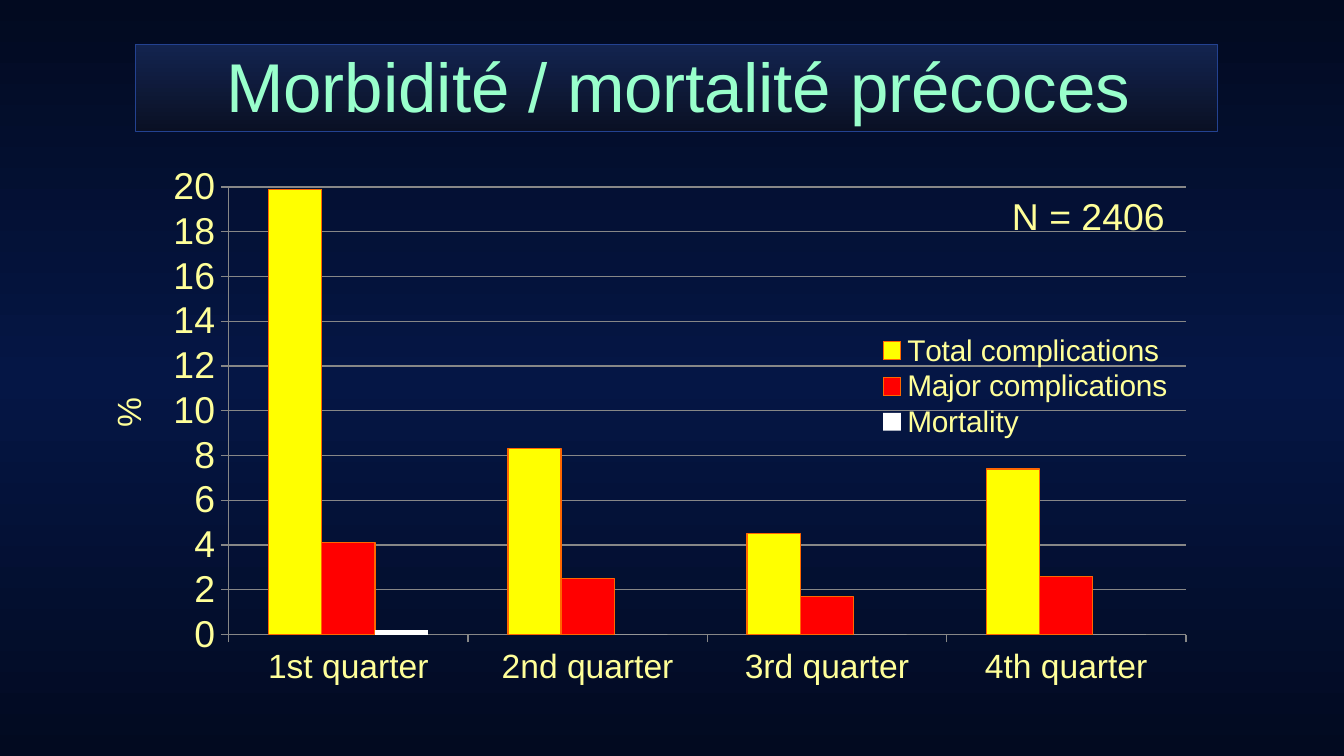
from copy import deepcopy

from pptx import Presentation
from pptx.chart.data import CategoryChartData
from pptx.dml.color import RGBColor
from pptx.enum.chart import XL_CHART_TYPE as Kind, XL_LEGEND_POSITION as Side
from pptx.enum.chart import XL_TICK_MARK as Tick
from pptx.enum.shapes import MSO_SHAPE as Shape
from pptx.enum.text import MSO_ANCHOR as Anchor, PP_ALIGN as Align
from pptx.oxml import parse_xml
from pptx.oxml.ns import nsdecls
from pptx.util import Inches, Pt

CREAM = "FFFF99"
GREY = "878787"


def paint(color, code):
    color.rgb = RGBColor.from_string(code)


def style(font, size, code):
    for name, value in {"name": "Arial", "size": Pt(size), "bold": False}.items():
        setattr(font, name, value)
    paint(font.color, code)


prs = Presentation()
prs.slide_width = Inches(10)
prs.slide_height = Inches(10 * 9 / 16)
slide = prs.slides.add_slide(prs.slide_layouts[6])
shapes = slide.shapes

# Title band
band = shapes.add_shape(Shape.RECTANGLE, Inches(1.01), Inches(0.33),
                        Inches(8.05), Inches(0.65))
band.shadow.inherit = False
paint_line = band.line
paint(paint_line.color, "234291")
paint_line.width = Pt(0.75)

# Gradients: the background is lighter in the middle, the band fades down
back = slide.background.fill
back.gradient()
stops = slide.element.xpath(".//p:bgPr//a:gsLst")[0]
stops.append(deepcopy(stops[0]))
band.fill.gradient()
fades = [
    (back, [(0, "020A20"), (0.5, "051645"), (1, "020A20")]),
    (band.fill, [(0, "13244F"), (1, "0A1024")]),
]
for fill, tones in fades:
    fill.gradient_angle = 270
    for stop, (pos, code) in zip(fill.gradient_stops, tones):
        stop.position = pos
        paint(stop.color, code)

# Chart
data = CategoryChartData()
data.categories = ["1st quarter", "2nd quarter", "3rd quarter", "4th quarter"]
rows = [
    ("Total complications", (19.9, 8.3, 4.5, 7.4), "FFFF00", "FF6600"),
    ("Major complications", (4.1, 2.5, 1.7, 2.6), "FF0000", "FF6600"),
    ("Mortality", (0.2, 0, 0, 0), "FFFFFF", None),
]
for name, vals, _, _ in rows:
    data.add_series(name, vals)
chart = shapes.add_chart(Kind.COLUMN_CLUSTERED, Inches(0.66), Inches(1.22),
                         Inches(8.54), Inches(3.9), data).chart
chart.has_title = False
style(chart.font, 10, "000000")
plot = chart.plots[0]
for name, value in {"gap_width": 150, "overlap": 0, "vary_by_categories": False}.items():
    setattr(plot, name, value)
for bars, (_, _, code, edge) in zip(plot.series, rows):
    bars.format.fill.solid()
    paint(bars.format.fill.fore_color, code)
    if edge:
        paint(bars.format.line.color, edge)
        bars.format.line.width = Pt(0.75)
    else:
        bars.format.line.fill.background()

cat, val = chart.category_axis, chart.value_axis
for axis, size in ((cat, 18), (val, 20)):
    style(axis.tick_labels.font, size, CREAM)
    axis.major_tick_mark = Tick.OUTSIDE
    axis.minor_tick_mark = Tick.NONE
    paint(axis.format.line.color, GREY)
for name, value in {"minimum_scale": 0, "maximum_scale": 20, "major_unit": 2,
                    "has_major_gridlines": True}.items():
    setattr(val, name, value)
paint(val.major_gridlines.format.line.color, GREY)
head = val.axis_title.text_frame
head.text = "%"
style(head.paragraphs[0].runs[0].font, 18, CREAM)

chart.has_legend = True
legend = chart.legend
legend.position = Side.RIGHT
legend.include_in_layout = False
style(legend.font, 16, CREAM)

# Fixed places, as shares of the chart: parent, element before, layout values
root = chart.element
edges = [("xMode", "edge"), ("yMode", "edge")]
inner = [("layoutTarget", "inner")]
places = [
    ("c:plotArea", None, inner + edges, (0.122, 0.044, 0.834, 0.854)),
    ("c:valAx/c:title", "c:tx", edges, (0.01, 0.435)),
    ("c:legend", "c:legendPos", edges, (0.686, 0.319, 0.26, 0.21)),
]
for tag, prior, marks, box in places:
    body = "".join(f'<c:{key} val="{value}"/>'
                   for key, value in [*marks, *zip("xywh", box)])
    layout = parse_xml(f'<c:layout {nsdecls("c")}><c:manualLayout>{body}'
                       "</c:manualLayout></c:layout>")
    part = root.xpath(f".//{tag}")[0]
    for old in part.xpath("./c:layout"):
        part.remove(old)
    if prior:
        part.xpath(f"./{prior}")[0].addnext(layout)
    else:
        part.insert(0, layout)

# Title and sample size
texts = [
    ("Morbidité / mortalité précoces", (0.8, 0.16, 8.5, 0.94), 37, "99FFCC",
     Align.CENTER, Anchor.MIDDLE),
    ("N = 2406", (7.45, 1.4, 2.8, 0.42), 20, CREAM, Align.LEFT, Anchor.TOP),
]
for words, box, size, code, align, anchor in texts:
    frame = shapes.add_textbox(*map(Inches, box)).text_frame
    for name, value in {"word_wrap": True, "vertical_anchor": anchor,
                        "margin_left": Inches(0.08), "margin_right": Inches(0.08),
                        "margin_top": Inches(0.04),
                        "margin_bottom": Inches(0.04)}.items():
        setattr(frame, name, value)
    para = frame.paragraphs[0]
    para.alignment = align
    run = para.add_run()
    run.text = words
    style(run.font, size, code)

prs.save("out.pptx")
